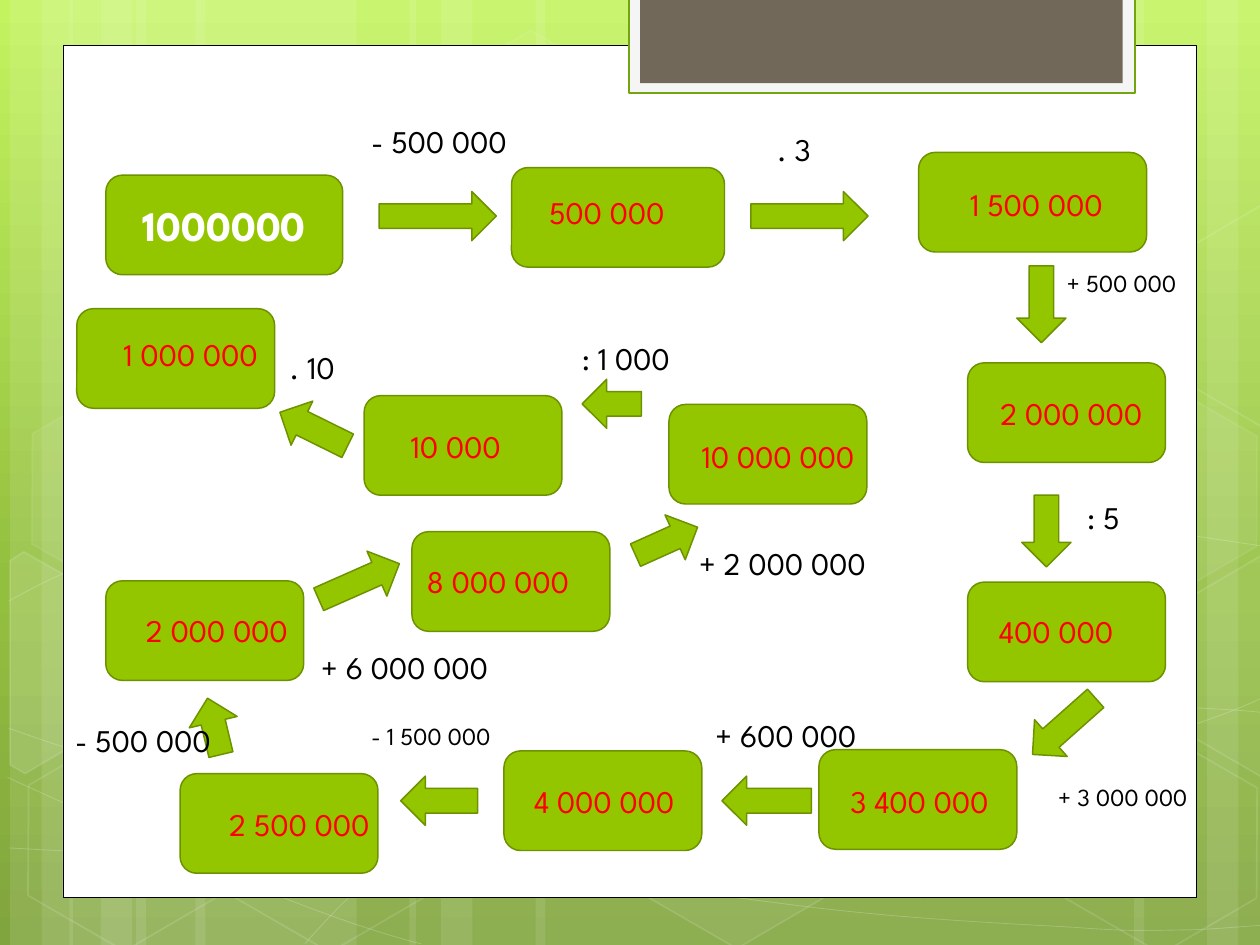
from copy import deepcopy
from typing import NamedTuple, Optional

from lxml.etree import SubElement
from pptx import Presentation
from pptx.dml.color import RGBColor
from pptx.enum.shapes import MSO_SHAPE as Preset
from pptx.enum.text import MSO_ANCHOR as Anchor, MSO_AUTO_SIZE as AutoSize, PP_ALIGN as Align
from pptx.oxml.ns import qn
from pptx.util import Emu, Pt

SCALE = 9144  # EMU per px, 100 px to the inch
FONT = "League Spartan"
COLORS = {
    "sky": "C3F35F", "leaf": "93BF3F", "moss": "81A53E",
    "white": "FFFFFF", "black": "000000", "red": "FF0000",
    "green": "94C600", "edge": "6D9200",
    "tab": "F5F5F5", "tab_edge": "74A510", "tab_core": "71685A",
}


class Rect(NamedTuple):
    left: int
    top: int
    width: int
    height: int


class Style(NamedTuple):
    fill: Optional[str] = None
    line: Optional[str] = None
    weight: float = 0.85
    fill_alpha: int = 100
    line_alpha: int = 100


class Step(NamedTuple):
    left: int
    top: int
    value: str
    text_left: int
    text_top: int
    width: int = 157


class Arrow(NamedTuple):
    left: int
    top: int
    width: int
    angle: float = 0
    thickness: float = 0.5


class Operation(NamedTuple):
    left: int
    top: int
    text: str
    size: int = 18
    width: int = 144


def px(value: float) -> Emu:
    return Emu(round(value * SCALE))


def rgb(name: str) -> RGBColor:
    return RGBColor.from_string(COLORS[name])


def paint(fill, color: Optional[str], alpha: int) -> None:
    if color is None:
        fill.background()
        return
    fill.solid()
    fill.fore_color.rgb = rgb(color)
    if alpha < 100:
        node = fill._xPr.find(qn("a:solidFill"))[0]
        SubElement(node, qn("a:alpha")).set("val", str(alpha * 1000))


def apply_style(shape, style: Style) -> None:
    shape.shadow.inherit = False
    paint(shape.fill, style.fill, style.fill_alpha)
    paint(shape.line.fill, style.line, style.line_alpha)
    if style.line:
        shape.line.width = Pt(style.weight)


def add_preset(shapes, preset, rect: Rect, style: Style, angle: float = 0):
    shape = shapes.add_shape(preset, *map(px, rect))
    shape.rotation = angle
    apply_style(shape, style)
    return shape


def add_outline(shapes, points: list, style: Style, close: bool):
    corners = [(px(x), px(y)) for x, y in points]
    builder = shapes.build_freeform(*corners[0])
    builder.add_line_segments(corners[1:], close=close)
    shape = builder.convert_to_shape()
    apply_style(shape, style)
    return shape


def add_curve(shapes, knots: list, style: Style) -> None:
    """Draw a chain of cubic curves: a start, then three points for each curve."""
    outline = add_outline(shapes, knots, style, close=False)
    route = next(outline._element.iter(qn("a:path")))
    segments = route.findall(qn("a:lnTo"))
    for first in range(0, len(segments), 3):
        curve = SubElement(route, qn("a:cubicBezTo"))
        for segment in segments[first:first + 3]:
            curve.append(segment[0])
            route.remove(segment)


def format_text(frame, text: str, size: int, color: str, bold: Optional[bool] = None) -> None:
    frame.text = text
    font = frame.paragraphs[0].runs[0].font
    font.name, font.size, font.bold = FONT, Pt(size), bold
    font.color.rgb = rgb(color)


def add_label(shapes, rect: Rect, text: str, size: int, color: str) -> None:
    frame = shapes.add_textbox(*map(px, rect)).text_frame
    frame.word_wrap = True
    frame.auto_size = AutoSize.SHAPE_TO_FIT_TEXT
    format_text(frame, text, size, color)


# Backdrop: left and width of each band, then curves and hexagons
BANDS = [(108, 175), (8, 50), (33, 83), (155, 175), (55, 50), (80, 83),
         (733, 175), (958, 50), (900, 83), (425, 308), (325, 50), (350, 83)]
CURVES = [
    [(7, 673), (61, 676), (115, 679), (190, 678), (265, 677), (358, 675), (458, 665),
     (558, 655), (700, 636), (792, 617), (883, 598), (977, 568), (1007, 551)],
    [(7, 477), (36, 461), (65, 446), (121, 431), (178, 416), (259, 394), (347, 387),
     (436, 380), (544, 379), (654, 387), (764, 395), (947, 426), (1007, 434)],
    [(6, 617), (127, 672), (247, 727), (334, 749)],
    [(7, 578), (38, 589), (70, 600), (128, 616), (186, 631), (273, 656), (357, 673),
     (440, 690), (545, 708), (628, 718), (711, 729), (800, 733), (853, 736),
     (905, 740), (919, 738), (945, 738), (971, 737), (989, 735), (1007, 734)],
    [(242, 749), (260, 729), (278, 709), (302, 691), (326, 673), (360, 653), (388, 639),
     (416, 625), (433, 619), (470, 609), (506, 599), (573, 585), (608, 578),
     (644, 571), (649, 571), (680, 569), (711, 566), (760, 563), (794, 562),
     (829, 561), (886, 562), (886, 562), (908, 562), (931, 562), (953, 562),
     (971, 563), (988, 564), (997, 565), (1006, 566), (1003, 565), (1006, 566)],
]
# left, top, fill opacity, line opacity
HEXAGONS = [(334, 36, 4, 8), (497, 589, 6, 12), (11, 591, 0, 12), (14, 312, 7, 8), (174, 592, 0, 12),
            (753, 453, 10, 12), (834, 593, 0, 12), (834, 314, 7, 8)]
# corners of the hexagons cut by the page edge, fill opacity
CUT_HEXAGONS = [
    ([(8, 445), (19, 438), (96, 482), (95, 570), (20, 614), (8, 607)], 10),
    ([(926, 485), (1001, 441), (1009, 446), (1009, 613), (1002, 617), (926, 573)], 4),
    ([(926, 207), (1001, 163), (1010, 168), (1009, 335), (1002, 339), (926, 295)], 0),
]

# Number chain
GREEN = Style("green", "edge")
STEPS = [
    Step(406, 133, "500 000", 426, 148, 169), Step(729, 121, "1 500 000", 760, 142, 181),
    Step(768, 288, "2 000 000", 784, 308), Step(768, 462, "400 000", 783, 481),
    Step(650, 595, "3 400 000", 665, 616), Step(400, 596, "4 000 000", 414, 616),
    Step(143, 614, "2 500 000", 172, 634), Step(84, 461, "2 000 000", 106, 480),
    Step(327, 422, "8 000 000", 329, 441), Step(531, 321, "10 000 000", 547, 342),
    Step(289, 314, "10 000", 316, 334), Step(61, 245, "1 000 000", 88, 261),
]
ARROWS = [
    Arrow(301, 152, 93), Arrow(596, 152, 93), Arrow(796, 222, 61, 90), Arrow(802, 402, 57, 90),
    Arrow(811, 557, 67, 138.4), Arrow(573, 616, 71, 180), Arrow(318, 616, 61, 180),
    Arrow(147, 557, 46, 256.6), Arrow(250, 442, 70, 336.2), Arrow(502, 410, 54, 335.8),
    Arrow(462, 301, 47, 180), Arrow(219, 321, 60, 206.3, 0.53),
]
OPERATIONS = [
    Operation(285, 92, "- 500 000"), Operation(607, 98, ". 3"), Operation(837, 208, "+ 500 000", 14),
    Operation(853, 390, ": 5"), Operation(830, 616, "+ 3 000 000", 14), Operation(558, 563, "+ 600 000"),
    Operation(285, 567, "- 1 500 000", 14), Operation(50, 567, "- 500 000"),
    Operation(245, 509, "+ 6 000 000", width=161), Operation(545, 427, "+ 2 000 000", width=157),
    Operation(452, 264, ": 1 000"), Operation(220, 271, ". 10"),
]


def draw_background(master) -> None:
    fill = master.background.fill
    fill.gradient()
    fill.gradient_angle = 270
    stops = fill._fill._gradFill.find(qn("a:gsLst"))
    stops.insert(1, deepcopy(stops[0]))
    for stop, color, position in zip(fill.gradient_stops, ("sky", "leaf", "moss"), (0, 0.62, 1)):
        stop.color.rgb = rgb(color)
        stop.position = position


def draw_backdrop(page) -> None:
    shapes = page.shapes.add_group_shape().shapes
    for left, width in BANDS:
        add_preset(shapes, Preset.RECTANGLE, Rect(left, 0, width, 750), Style("white", fill_alpha=10))
    for knots in CURVES:
        add_curve(shapes, knots, Style(line="white", weight=0.5, line_alpha=20))
    for left, top, fill_alpha, line_alpha in HEXAGONS:
        style = Style("white" if fill_alpha else None, "white", 1, fill_alpha, line_alpha)
        hexagon = add_preset(shapes, Preset.HEXAGON, Rect(left, top, 175, 152), style, 30)
        hexagon.adjustments[0] = 0.285
    for corners, fill_alpha in CUT_HEXAGONS:
        add_outline(shapes, corners, Style("white" if fill_alpha else None, "white", 1, fill_alpha, 12), True)
    # White panel and tab
    add_preset(page.shapes, Preset.RECTANGLE, Rect(50, 36, 900, 676), Style("white", "black", 0.5))
    add_preset(page.shapes, Preset.RECTANGLE, Rect(499, -2, 402, 76), Style("tab", "tab_edge"))
    add_preset(page.shapes, Preset.RECTANGLE, Rect(508, -2, 383, 68), Style("tab_core"))


def move_to_master(page, master) -> None:
    """Hand the shapes drawn so far to the slide master, under fresh ids."""
    for shape in list(page.shapes):
        for node in shape._element.iter(qn("p:cNvPr")):
            node.set("id", str(int(node.get("id")) + 100))
        master.shapes._spTree.append(shape._element)


def draw_chain(shapes) -> None:
    start = add_preset(shapes, Preset.ROUNDED_RECTANGLE, Rect(84, 139, 188, 79), GREEN)
    format_text(start.text_frame, "1000000", 24, "white", True)
    start.text_frame.vertical_anchor = Anchor.MIDDLE
    start.text_frame.paragraphs[0].alignment = Align.CENTER
    for step in STEPS:
        add_preset(shapes, Preset.ROUNDED_RECTANGLE, Rect(step.left, step.top, step.width, 79), GREEN)
    for arrow in ARROWS:
        shape = add_preset(shapes, Preset.RIGHT_ARROW, Rect(arrow.left, arrow.top, arrow.width, 39),
                           GREEN, arrow.angle)
        shape.adjustments[0] = arrow.thickness
    for item in OPERATIONS:
        height = 40 if item.size == 18 else 34
        add_label(shapes, Rect(item.left, item.top, item.width, height), item.text, item.size, "black")
    for step in STEPS:
        add_label(shapes, Rect(step.text_left, step.text_top, 165, 40), step.value, 18, "red")


def main() -> None:
    deck = Presentation()
    deck.slide_width, deck.slide_height = px(1000), px(750)
    page = deck.slides.add_slide(deck.slide_layouts[6])
    draw_background(deck.slide_master)
    draw_backdrop(page)
    move_to_master(page, deck.slide_master)
    draw_chain(page.shapes)
    deck.save("out.pptx")


if __name__ == "__main__":
    main()
